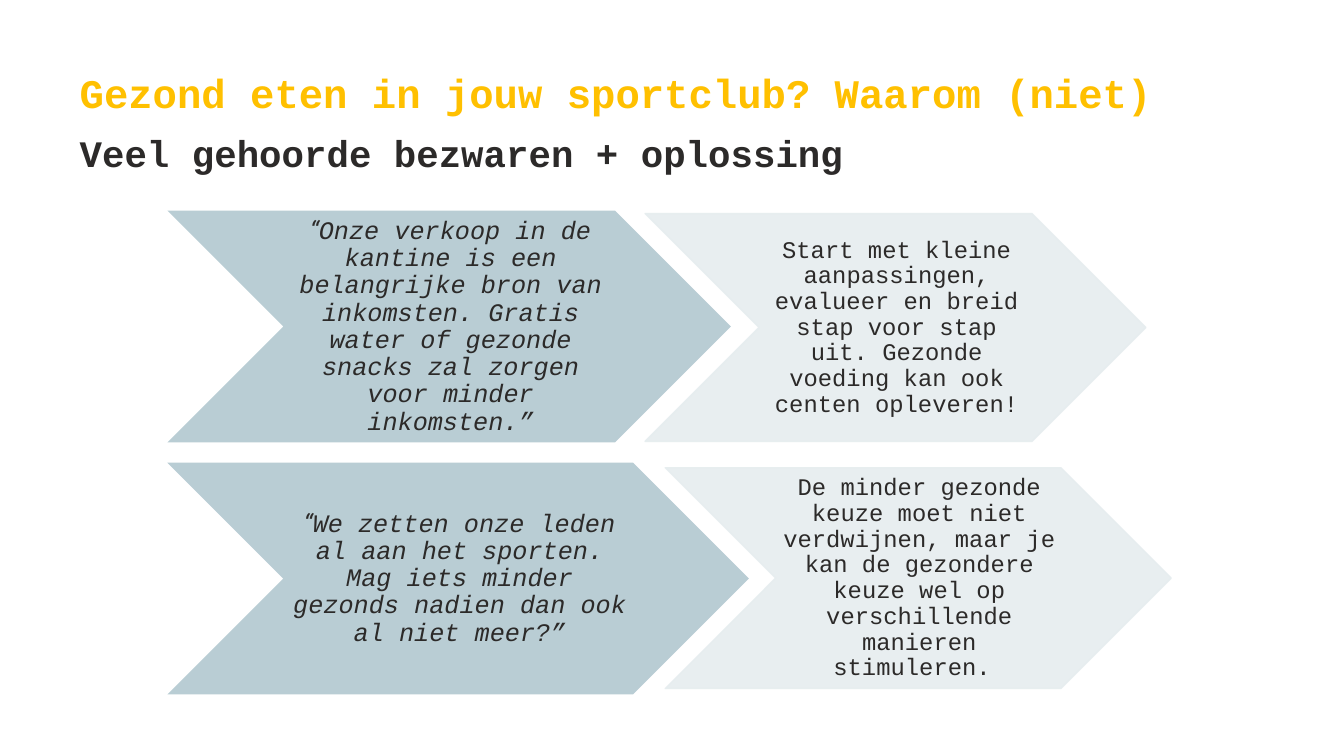
from lxml import etree
from pptx import Presentation
from pptx.dml.color import RGBColor
from pptx.enum.shapes import MSO_SHAPE
from pptx.enum.text import MSO_ANCHOR, PP_ALIGN
from pptx.oxml.ns import qn
from pptx.util import Pt

CHEVRON = MSO_SHAPE.CHEVRON
MIDDLE = MSO_ANCHOR.MIDDLE
CENTER = PP_ALIGN.CENTER
INK = "2C2A29"
YELLOW = "FFC000"
BLUE = "B9CDD4"
PALE = "E6EDEF"
MONO = "Courier New"


def color(value):
    return RGBColor.from_string(value)


def add_text(para, text, size, font, tint=INK, bold=False, italic=False):
    span = para.add_run()
    span.text = text
    span.font.size = Pt(size)
    span.font.name = font
    span.font.bold = bold
    span.font.italic = italic
    span.font.color.rgb = color(tint)


deck = Presentation()
deck.slide_width = Pt(960)
deck.slide_height = Pt(540)
page = deck.slides.add_slide(deck.slide_layouts[6])

headings = [
    (48.2, "Gezond eten in jouw sportclub? Waarom (niet)", 29, YELLOW),
    (92.9, "Veel gehoorde bezwaren + oplossing", 26.7, INK),
]
for top, text, size, tint in headings:
    box = page.shapes.add_textbox(Pt(56.9), Pt(top), Pt(865.4), Pt(28.1))
    frame = box.text_frame
    frame.word_wrap = True
    frame.margin_left = frame.margin_right = 0
    frame.margin_top = frame.margin_bottom = 0
    add_text(frame.paragraphs[0], text, size, MONO, tint, bold=True)

arrows = [
    (119.6, 150.5, 402.5, 165.6, True,
     "Onze verkoop in de kantine is een belangrijke bron van inkomsten. "
     "Gratis water of gezonde snacks zal zorgen voor minder inkomsten.”"),
    (460.8, 152.6, 357.8, 162.7, False,
     "Start met kleine aanpassingen, evalueer en breid stap voor stap uit. "
     "Gezonde voeding kan ook centen opleveren!"),
    (119.6, 330.5, 415.4, 165.6, True,
     "We zetten onze leden al aan het sporten. "
     "Mag iets minder gezonds nadien dan ook al niet meer?”"),
    (475.2, 334.1, 361.4, 157.7, False,
     "De minder gezonde keuze moet niet verdwijnen, maar je kan de gezondere "
     "keuze wel op verschillende manieren stimuleren. "),
]
for left, top, width, height, objection, text in arrows:
    arrow = page.shapes.add_shape(CHEVRON, Pt(left), Pt(top), Pt(width), Pt(height))
    arrow.shadow.inherit = False
    arrow.fill.solid()
    arrow.fill.fore_color.rgb = color(BLUE if objection else PALE)
    if objection:
        arrow.line.fill.background()
    else:
        arrow.line.color.rgb = color(PALE)
        arrow.line.width = Pt(1)
        for tint in arrow.element.spPr.iter(qn("a:srgbClr")):
            etree.SubElement(tint, qn("a:alpha")).set("val", "90000")

    box = page.shapes.add_textbox(
        Pt(left + height / 2), Pt(top), Pt(width - height), Pt(height))
    frame = box.text_frame
    frame.word_wrap = True
    frame.vertical_anchor = MIDDLE
    frame.margin_left = Pt(2 if objection else 1.5)
    frame.margin_right = 0
    frame.margin_top = frame.margin_bottom = Pt(0.7)
    para = frame.paragraphs[0]
    para.alignment = CENTER
    para.line_spacing = 0.9
    if objection:
        add_text(para, "“", 18, "Roboto", italic=True)
    add_text(para, text, 18 if objection else 17, MONO, italic=objection)

deck.save("out.pptx")
